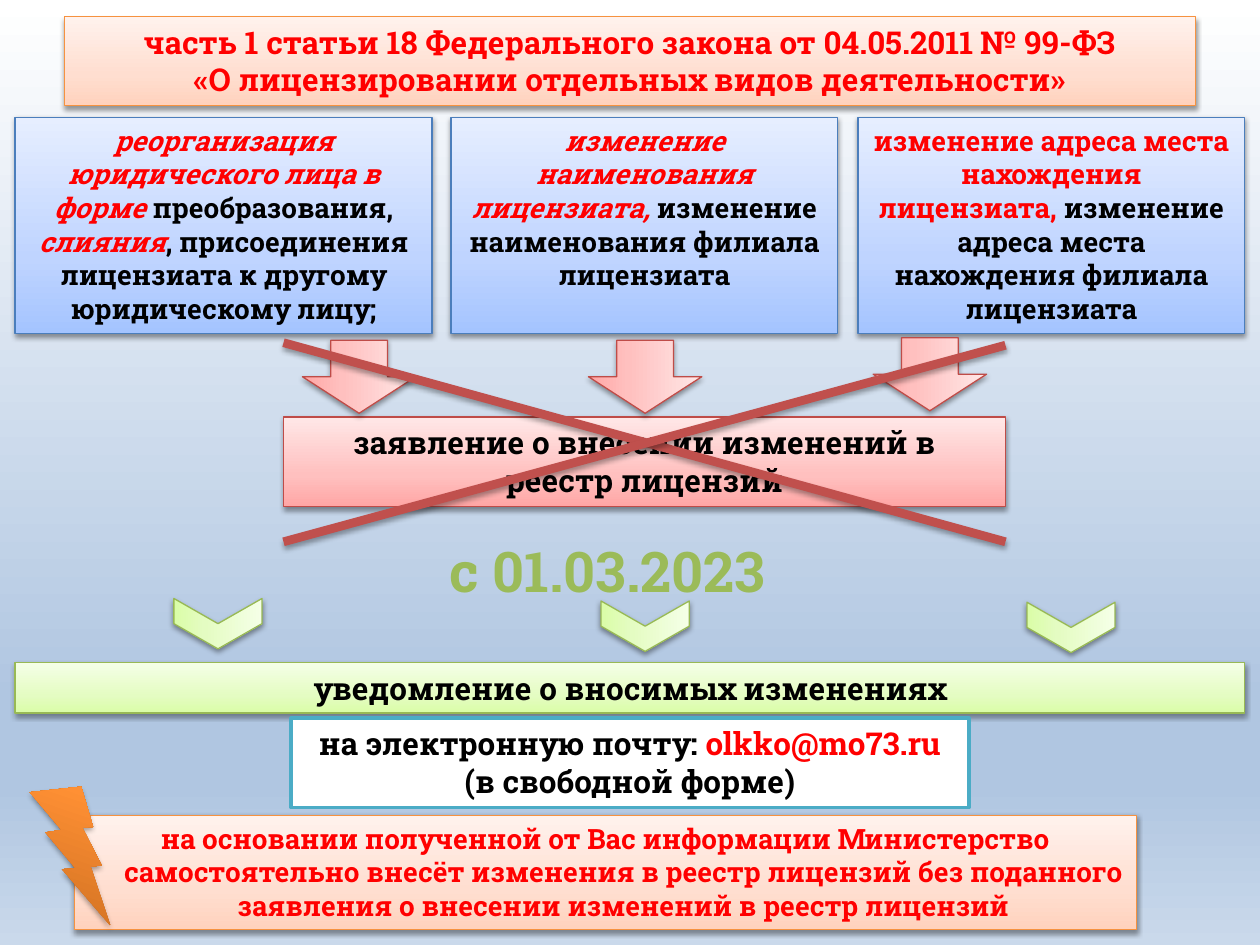
from lxml import etree
from pptx import Presentation
from pptx.dml.color import RGBColor
from pptx.enum import shapes, text
from pptx.oxml.ns import qn
from pptx.util import Inches, Pt

FONT = "Roboto Slab"
BLACK = RGBColor(0x00, 0x00, 0x00)
WHITE = RGBColor(0xFF, 0xFF, 0xFF)
RED = RGBColor(0xFF, 0x00, 0x00)
TEAL = RGBColor(0x4B, 0xAC, 0xC6)
OLIVE = RGBColor(0x9B, 0xBB, 0x59)
BRICK = RGBColor(0xC0, 0x50, 0x4D)


def palette(line, *colors, stops=(0, 35, 100)):
    """Outline colour (or None) and gradient stops."""
    line = RGBColor.from_string(line) if line else None
    return line, [(pos, RGBColor.from_string(c)) for pos, c in zip(stops, colors)]


BLUE = palette("4B7EBC", "A4C4FF", "BFD4FF", "E6EEFF")
PINK = palette("BF4C48", "FFA6A5", "FFC0BF", "FFE7E7")
GREEN = palette("98B955", "DAFDA7", "E4FCC2", "F5FFE7")
PEACH = palette("F69240", "FFD2BD", "FFDED0", "FFF2ED")
ORANGE = palette(None, "CC6E20", "FF9034", "FF9136", stops=(0, 80, 100))
SKY = palette(None, "FFFFFF", "B0C6E1", "B0C6E1", "CAD9EB", stops=(0, 74, 83, 100))


class SlideBuilder:
    def __init__(self, s):
        self.s = s

    def gradient(self, fill, element, stops, angle=90):
        fill.gradient()
        fill.gradient_angle = angle
        gs_list = element.find(".//" + qn("a:gsLst"))
        for gs in list(gs_list):
            gs_list.remove(gs)
        for pos, color in stops:
            gs = etree.SubElement(gs_list, qn("a:gs"), pos=str(pos * 1000))
            etree.SubElement(gs, qn("a:srgbClr"), val=str(color))

    def background(self, colors):
        self.gradient(self.s.background.fill, self.s.element, colors[1], angle=270)

    def shadow(self, sp, alpha=38, dist=1.6):
        props = sp.element.spPr
        effects = props.find(qn("a:effectLst"))
        if effects is None:
            effects = etree.SubElement(props, qn("a:effectLst"))
        outer = etree.SubElement(effects, qn("a:outerShdw"), blurRad=str(Pt(3.1)),
                                 dist=str(Pt(dist)), dir="5400000", rotWithShape="0")
        color = etree.SubElement(outer, qn("a:srgbClr"), val=str(BLACK))
        etree.SubElement(color, qn("a:alpha"), val=str(alpha * 1000))

    def shape(self, kind, at, colors, rotation=0, alpha=38, dist=1.6):
        sp = self.s.shapes.add_shape(kind, *map(Inches, at))
        sp.rotation = rotation
        sp.shadow.inherit = False
        line, stops = colors
        if line is None:
            sp.line.fill.background()
        else:
            sp.line.color.rgb = line
            sp.line.width = Pt(0.75)
        self.gradient(sp.fill, sp.element, stops)
        self.shadow(sp, alpha, dist)
        return sp

    def add_text(self, sp, paragraphs, size, align=text.PP_ALIGN.CENTER, wrap=True):
        tf = sp.text_frame
        tf.word_wrap = wrap
        tf.auto_size = text.MSO_AUTO_SIZE.SHAPE_TO_FIT_TEXT
        tf.vertical_anchor = text.MSO_ANCHOR.TOP
        for i, runs in enumerate(paragraphs):
            p = tf.add_paragraph() if i else tf.paragraphs[0]
            p.alignment = align
            p.font.name, p.font.size, p.font.bold = FONT, Pt(size), True
            for words, color, *italic in runs:
                r = p.add_run()
                r.text = words
                r.font.color.rgb = color
                if italic:
                    r.font.italic = True

    def box(self, at, colors, paragraphs, size=18):
        sp = self.shape(shapes.MSO_SHAPE.RECTANGLE, at, colors)
        self.add_text(sp, paragraphs, size)
        return sp

    def plain_box(self, at, paragraphs, size=18):
        sp = self.s.shapes.add_shape(shapes.MSO_SHAPE.RECTANGLE, *map(Inches, at))
        sp.shadow.inherit = False
        sp.fill.solid()
        sp.fill.fore_color.rgb = WHITE
        sp.line.color.rgb = TEAL
        sp.line.width = Pt(2)
        self.add_text(sp, paragraphs, size)

    def label(self, at, words, color, size):
        sp = self.s.shapes.add_textbox(*map(Inches, at))
        self.add_text(sp, [[(words, color)]], size, text.PP_ALIGN.LEFT, wrap=False)

    def line(self, *ends):
        sp = self.s.shapes.add_connector(shapes.MSO_CONNECTOR.STRAIGHT, *map(Inches, ends))
        sp.line.color.rgb = BRICK
        sp.line.width = Pt(5)
        self.shadow(sp, alpha=35, dist=1.8)


def main():
    prs = Presentation()
    prs.slide_width, prs.slide_height = Inches(10), Inches(7.5)
    b = SlideBuilder(prs.slides.add_slide(prs.slide_layouts[6]))
    b.background(SKY)

    # Three kinds of change
    changes = [
        (0.12, 3.31, [("реорганизация юридического лица в форме ", RED, True),
                      ("преобразования, ", BLACK), ("слияния", RED, True),
                      (", присоединения лицензиата к другому юридическому лицу;", BLACK)]),
        (3.58, 3.07, [("изменение наименования лицензиата,", RED, True),
                      (" изменение наименования филиала лицензиата", BLACK)]),
        (6.81, 3.07, [("изменение адреса места нахождения лицензиата,", RED),
                      (" изменение адреса места нахождения филиала лицензиата", BLACK)]),
    ]
    for left, width, runs in changes:
        b.box((left, 0.93, width, 1.72), BLUE, [runs], 16)

    # Old application, notification and e-mail
    b.box((2.25, 3.31, 5.73, 0.71), PINK,
          [[("заявление о внесении изменений в реестр лицензий", BLACK)]])
    b.box((0.12, 5.26, 9.76, 0.4), GREEN, [[("уведомление о вносимых изменениях", BLACK)]])
    b.plain_box((2.31, 5.7, 5.38, 0.71),
                [[("на электронную почту: ", BLACK), ("olkko@mo73.ru", RED),
                  (" (в свободной форме)", BLACK)]])

    # Outcome, with a hanging indent
    outcome = b.box((0.59, 6.47, 8.43, 0.91), PEACH,
                    [[("на основании полученной от Вас информации Министерство "
                       "самостоятельно внесёт изменения в реестр лицензий без поданного "
                       "заявления о внесении изменений в реестр лицензий", RED)]], 16)
    p_pr = outcome.text_frame.paragraphs[0]._p.get_or_add_pPr()
    p_pr.set("marL", str(Inches(0.29)))
    p_pr.set("indent", str(Inches(-0.29)))

    # Title
    b.box((0.51, 0.13, 8.98, 0.71), PEACH,
          [[("часть 1 статьи 18 Федерального закона от 04.05.2011 № 99-ФЗ", RED)],
           [("«О лицензировании отдельных видов деятельности»", RED)]])

    # Arrows to the old application
    for left, top in ((4.83, 2.54), (2.56, 2.54), (7.09, 2.52)):
        b.shape(shapes.MSO_SHAPE.RIGHT_ARROW, (left, top, 0.58, 0.9), PINK, 90)

    # Start date and crossing-out
    b.label((3.47, 4.21, 3.29, 0.64), "с 01.03.2023", OLIVE, 32)
    b.line(2.25, 2.72, 7.98, 4.3)
    b.line(2.25, 4.3, 7.98, 2.74)

    # Chevrons to the notification
    for left, top in ((4.92, 4.62), (1.53, 4.6), (8.3, 4.63)):
        b.shape(shapes.MSO_SHAPE.CHEVRON, (left, top, 0.4, 0.7), GREEN, 90)

    # Lightning accent
    b.shape(shapes.MSO_SHAPE.LIGHTNING_BOLT, (0.11, 6.25, 0.95, 0.97), ORANGE, 18.9, 35, 1.8)

    prs.save("out.pptx")


if __name__ == "__main__":
    main()
